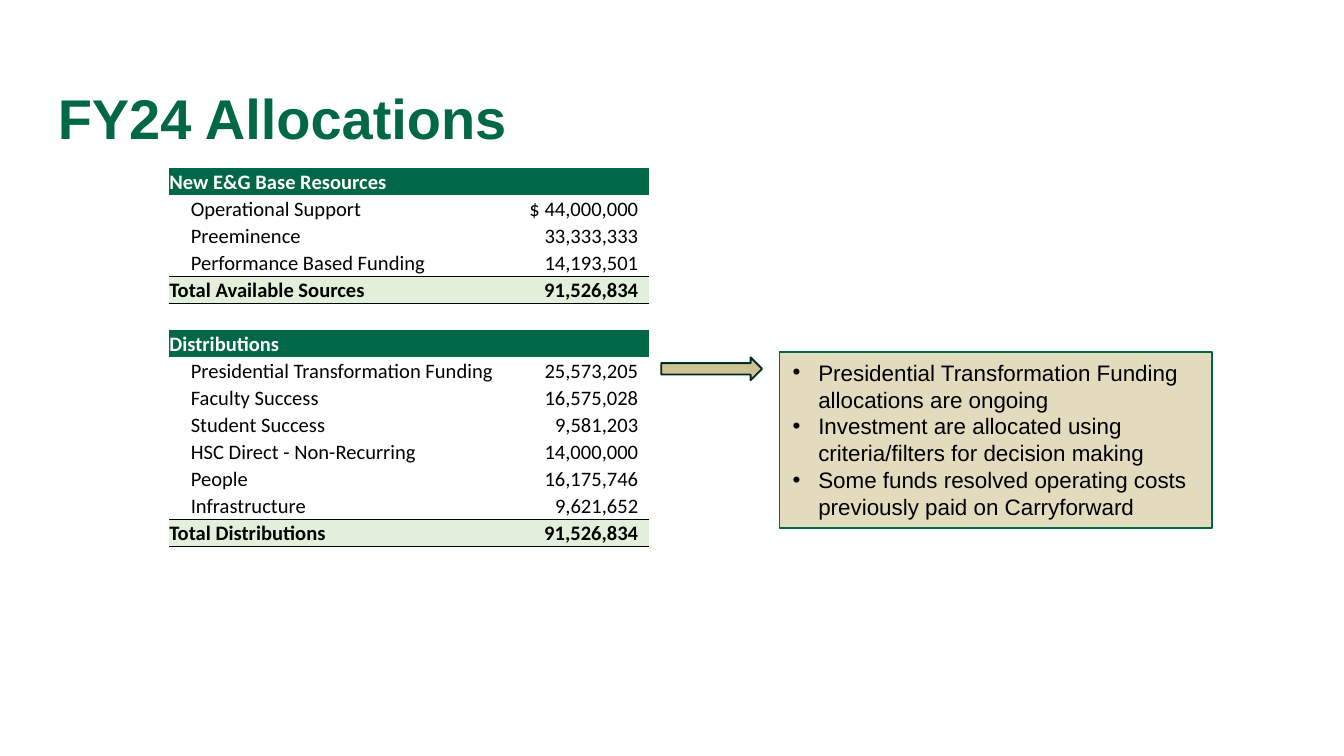
from lxml import etree
from pptx import Presentation
from pptx.dml.color import RGBColor
from pptx.enum.shapes import MSO_SHAPE
from pptx.enum.text import MSO_ANCHOR, PP_ALIGN
from pptx.oxml.ns import qn
from pptx.util import Inches, Pt

RECT, ARROW = MSO_SHAPE.RECTANGLE, MSO_SHAPE.RIGHT_ARROW
TOP, MIDDLE, BOTTOM = MSO_ANCHOR.TOP, MSO_ANCHOR.MIDDLE, MSO_ANCHOR.BOTTOM
LEFT, RIGHT = PP_ALIGN.LEFT, PP_ALIGN.RIGHT

GREEN, DARK_GREEN, PALE_GREEN = "006747", "002D1F", "E2EFDA"
SAND, GOLD = "E2DBBE", "CFC493"
BLACK, WHITE = "000000", "FFFFFF"
NO_GRID_STYLE = "{2D5ABB26-0587-4C30-8999-92F81FD0307C}"

# Row kinds: text colour, bold, fill, left indent
ROW_STYLES = {
    "head": (WHITE, True, GREEN, 0),
    "item": (BLACK, False, WHITE, 0.16),
    "total": (BLACK, True, PALE_GREEN, 0),
    "gap": (BLACK, False, WHITE, 0),
}
ROWS = [
    ("head", "New E&G Base Resources", ""),
    ("item", "Operational Support", "$ 44,000,000"),
    ("item", "Preeminence", "33,333,333"),
    ("item", "Performance Based Funding", "14,193,501"),
    ("total", "Total Available Sources", "91,526,834"),
    ("gap", "", ""),
    ("head", "Distributions", ""),
    ("item", "Presidential Transformation Funding", "25,573,205"),
    ("item", "Faculty Success", "16,575,028"),
    ("item", "Student Success", "9,581,203"),
    ("item", "HSC Direct - Non-Recurring", "14,000,000"),
    ("item", "People", "16,175,746"),
    ("item", "Infrastructure", "9,621,652"),
    ("total", "Total Distributions", "91,526,834"),
]
NOTES = [
    "Presidential Transformation Funding allocations are ongoing",
    "Investment are allocated using criteria/filters for decision making",
    "Some funds resolved operating costs previously paid on Carryforward",
]


def rgb(color):
    return RGBColor.from_string(color)


def set_attrs(obj, **values):
    for name, value in values.items():
        setattr(obj, name, value)


def add_run(p, text, font, size, color, bold=False):
    r = p.add_run()
    r.text = text
    set_attrs(r.font, name=font, size=Pt(size), bold=bold)
    r.font.color.rgb = rgb(color)


def add_box(s, kind, box, fill, line):
    sp = s.shapes.add_shape(kind, *map(Inches, box))
    sp.shadow.inherit = False
    sp.fill.solid()
    sp.fill.fore_color.rgb = rgb(fill)
    sp.line.color.rgb = rgb(line)
    sp.line.width = Pt(1)
    return sp


def add_title(s, box, text):
    title = s.shapes.title
    left, top, width, height = map(Inches, box)
    set_attrs(title, left=left, top=top, width=width, height=height)
    tf = title.text_frame
    set_attrs(tf, vertical_anchor=MIDDLE, word_wrap=True)
    p = tf.paragraphs[0]
    set_attrs(p, alignment=LEFT, line_spacing=0.9)
    add_run(p, text, "Arial", 30, GREEN, True)


def add_borders(cell, ruled):
    """Set the top and bottom lines, ahead of the cell fill."""
    tc_pr = cell._tc.get_or_add_tcPr()
    for i, (edge, is_ruled) in enumerate(zip("TB", ruled)):
        ln = etree.Element(qn(f"a:ln{edge}"), w=str(Pt(0.5)))
        if is_ruled:
            fill = etree.SubElement(ln, qn("a:solidFill"))
            etree.SubElement(fill, qn("a:srgbClr"), val=BLACK)
        else:
            etree.SubElement(ln, qn("a:noFill"))
        tc_pr.insert(i, ln)


def fill_cell(cell, text, kind, is_number):
    color, bold, fill, indent = ROW_STYLES[kind]
    set_attrs(cell, vertical_anchor=BOTTOM, margin_top=0, margin_bottom=0,
              margin_left=0 if is_number else Inches(indent),
              margin_right=Inches(0.08) if is_number else 0)
    cell.fill.solid()
    cell.fill.fore_color.rgb = rgb(fill)
    p = cell.text_frame.paragraphs[0]
    p.alignment = RIGHT if is_number else LEFT
    if text:
        add_run(p, text, "Calibri", 11, color, bold)
    else:
        # Keeps an empty cell from growing its row
        p._p.get_or_add_endParaRPr().set("sz", "1100")


def add_allocations(s, box, rows, label_width):
    left, top, width, height = box
    frame = s.shapes.add_table(len(rows), 2, *map(Inches, box))
    table = frame.table
    set_attrs(table, first_row=False, horz_banding=False)
    table._tbl.tblPr.find(qn("a:tableStyleId")).text = NO_GRID_STYLE
    for col, col_width in zip(table.columns, (label_width, width - label_width)):
        col.width = Inches(col_width)
    kinds = [None] + [row[0] for row in rows] + [None]
    for i, (kind, *texts) in enumerate(rows):
        table.rows[i].height = Inches(height / len(rows))
        # Totals are ruled above and below; neighbours share those lines
        ruled = ["total" in (kind, other) for other in (kinds[i], kinds[i + 2])]
        for j, text in enumerate(texts):
            cell = table.cell(i, j)
            fill_cell(cell, text, kind, j == 1)
            add_borders(cell, ruled)


def add_notes_box(s, box, notes):
    sp = add_box(s, RECT, box, SAND, GREEN)
    tf = sp.text_frame
    set_attrs(tf, word_wrap=True, vertical_anchor=TOP)
    for i, note in enumerate(notes):
        p = tf.paragraphs[0] if i == 0 else tf.add_paragraph()
        p.alignment = LEFT
        p_pr = p._p.get_or_add_pPr()
        p_pr.set("marL", str(Inches(0.19)))
        p_pr.set("indent", str(-Inches(0.19)))
        etree.SubElement(p_pr, qn("a:buFont"), typeface="Arial")
        etree.SubElement(p_pr, qn("a:buChar"), char="•")
        add_run(p, note, "Arial", 12, BLACK)


def main():
    prs = Presentation()
    # Widescreen, 16:9
    set_attrs(prs, slide_width=Inches(10), slide_height=Inches(10 * 9 / 16))
    s = prs.slides.add_slide(prs.slide_layouts.get_by_name("Title Only"))

    add_title(s, (0.33, 0.53, 9.33, 0.74), "FY24 Allocations")
    add_allocations(s, (1.26, 1.25, 3.57, 2.82), ROWS, 2.65)
    add_notes_box(s, (5.8, 2.62, 3.22, 1.31), NOTES)
    # Arrow from the funding row to the notes
    add_box(s, ARROW, (4.92, 2.66, 0.75, 0.17), GOLD, DARK_GREEN)

    prs.save("out.pptx")


if __name__ == "__main__":
    main()
